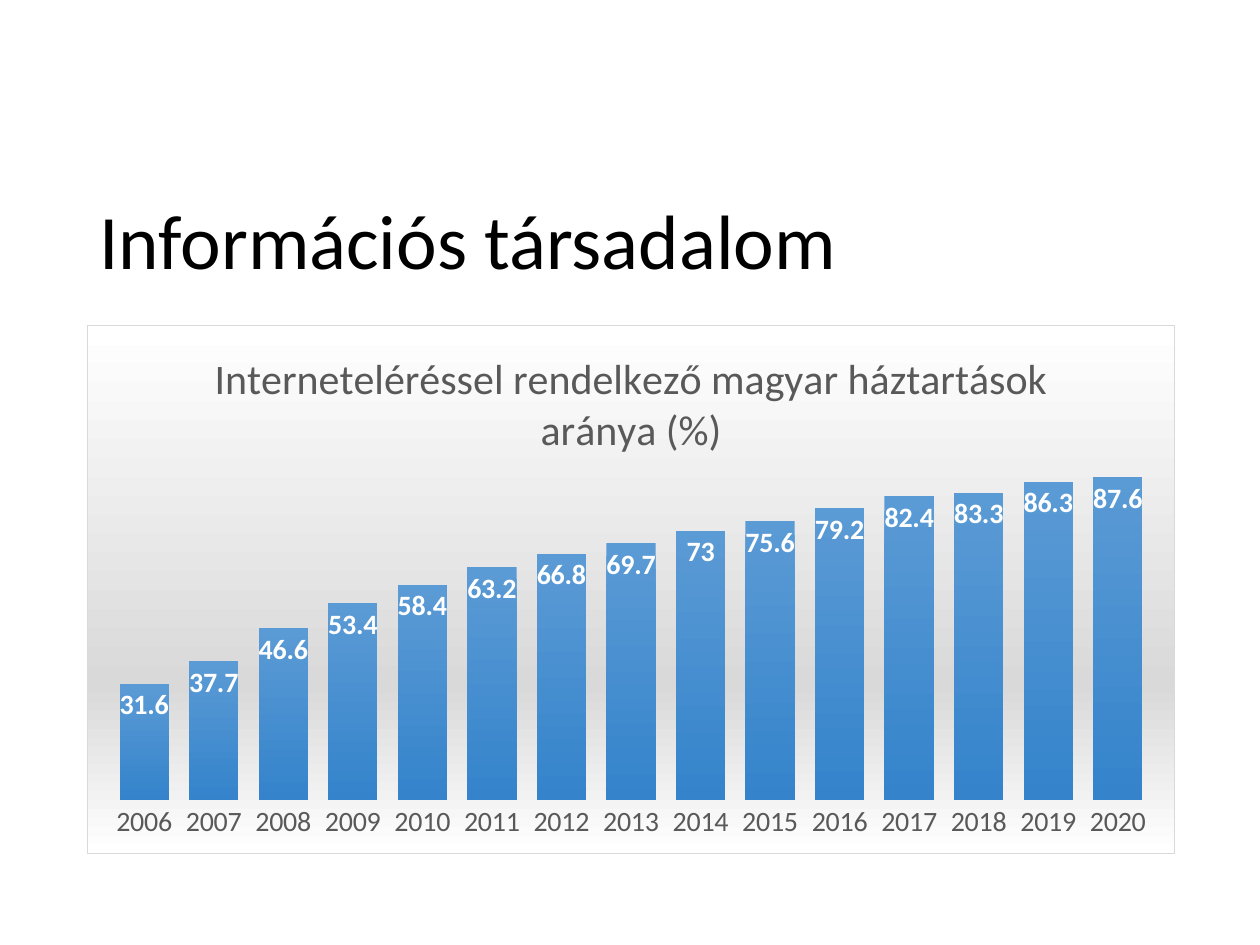
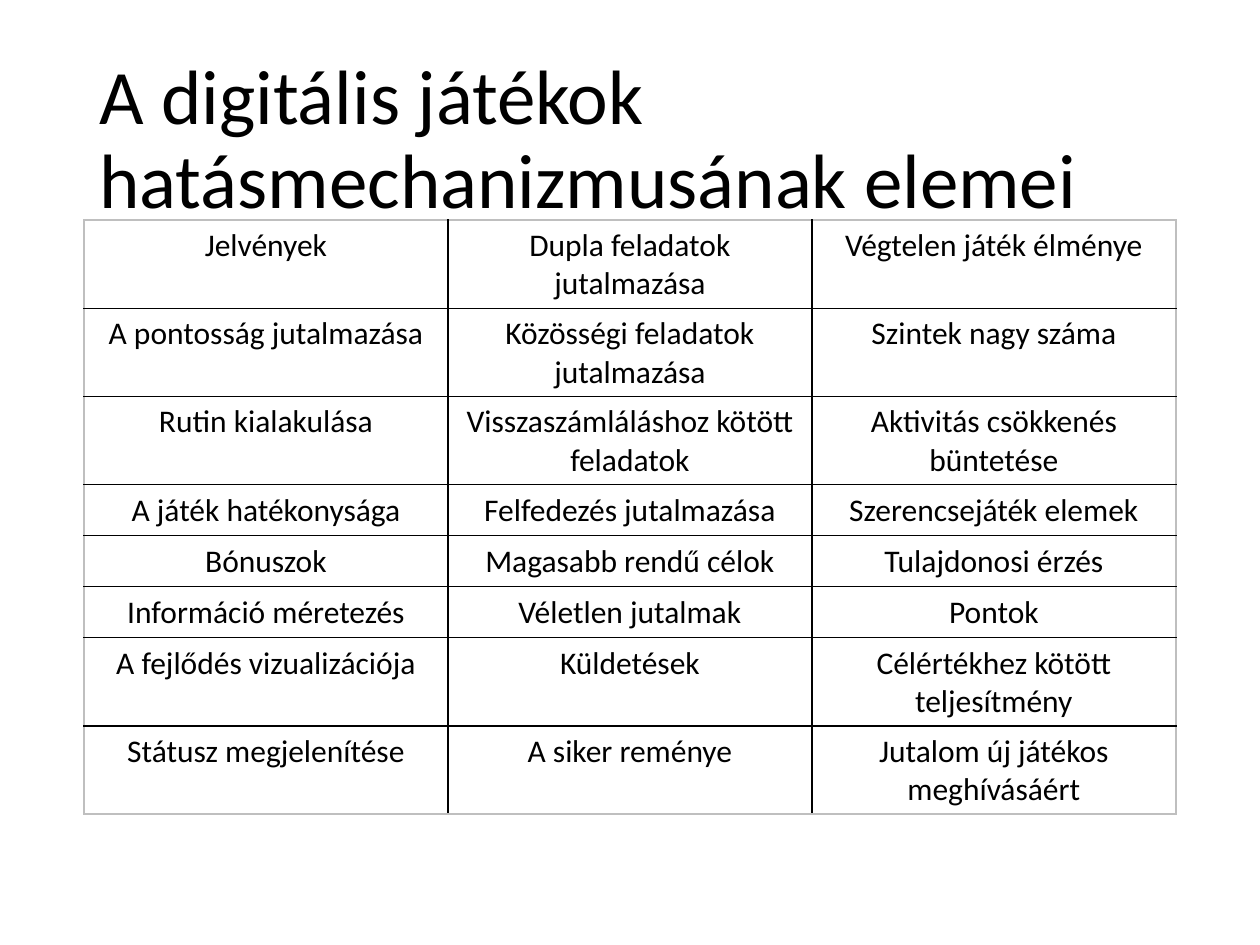
from dataclasses import dataclass

from lxml import etree
from pptx import Presentation, util as u
from pptx.chart.data import CategoryChartData
from pptx.dml.color import RGBColor
from pptx.enum import chart as ch, text
from pptx.oxml import parse_xml
from pptx.oxml.ns import nsdecls, qn

PX_PER_INCH = 126


@dataclass(frozen=True)
class Theme:
    font: str = "Calibri"
    black: str = "000000"
    white: str = "FFFFFF"
    gray: str = "595959"
    edge: str = "BFBFBF"
    frame: str = "D9D9D9"
    bar_top: str = "5B9BD5"
    bar_bottom: str = "3483CB"
    title_size: int = 44
    chart_title_size: int = 24
    cell_size: int = 18
    label_size: int = 16


T = Theme()

YEARS = [str(year) for year in range(2006, 2021)]
SHARES = [31.6, 37.7, 46.6, 53.4, 58.4, 63.2, 66.8, 69.7,
          73, 75.6, 79.2, 82.4, 83.3, 86.3, 87.6]

GAME_ELEMENTS = [
    ["Jelvények", "Dupla feladatok jutalmazása", "Végtelen játék élménye"],
    ["A pontosság jutalmazása", "Közösségi feladatok jutalmazása", "Szintek nagy száma"],
    ["Rutin kialakulása", "Visszaszámláláshoz kötött feladatok",
     "Aktivitás csökkenés büntetése"],
    ["A játék hatékonysága", "Felfedezés jutalmazása", "Szerencsejáték elemek"],
    ["Bónuszok", "Magasabb rendű célok", "Tulajdonosi érzés"],
    ["Információ méretezés", "Véletlen jutalmak", "Pontok"],
    ["A fejlődés vizualizációja", "Küldetések", "Célértékhez kötött teljesítmény"],
    ["Státusz megjelenítése", "A siker reménye", "Jutalom új játékos meghívásáért"],
]


def px(n):
    return u.Emu(round(n * u.Inches(1) / PX_PER_INCH))


def style_font(font, size, color, bold=False):
    font.name = T.font
    font.size = u.Pt(size)
    font.bold = bold
    font.color.rgb = RGBColor.from_string(color)


def gradient(stops):
    """Top-to-bottom gradient fill from (percent, colour) pairs."""
    marks = "".join(f'<a:gs pos="{pos * 1000}"><a:srgbClr val="{color}"/></a:gs>'
                    for pos, color in stops)
    return parse_xml(f'<a:gradFill {nsdecls("a")} rotWithShape="1"><a:gsLst>{marks}</a:gsLst>'
                     '<a:lin ang="5400000" scaled="0"/></a:gradFill>')


def outline(tag, color, points):
    return parse_xml(f'<a:{tag} {nsdecls("a")} w="{u.Pt(points)}"><a:solidFill>'
                     f'<a:srgbClr val="{color}"/></a:solidFill></a:{tag}>')


def add_title(s, words, top, height):
    tf = s.shapes.add_textbox(px(87), px(top), px(1086), px(height)).text_frame
    tf.word_wrap = True
    tf.vertical_anchor = text.MSO_ANCHOR.MIDDLE
    tf.text = words
    p = tf.paragraphs[0]
    p.line_spacing = 0.9
    style_font(p.runs[0].font, T.title_size, T.black)


def frame_chart(chart):
    """Gradient background and thin border around the chart."""
    sp_pr = parse_xml(f'<c:spPr {nsdecls("c", "a")}/>')
    sp_pr.append(gradient([(0, T.white), (68, T.frame), (100, T.white)]))
    sp_pr.append(outline("ln", T.frame, 0.75))
    chart._chartSpace.find(qn("c:chart")).addnext(sp_pr)


def place_plot(chart, **box):
    """Fix the inner plot area as fractions of the chart."""
    plot_area = chart._chartSpace.find(".//" + qn("c:plotArea"))
    for old in plot_area.findall(qn("c:layout")):
        plot_area.remove(old)
    layout = parse_xml(f'<c:layout {nsdecls("c")}><c:manualLayout/></c:layout>')
    values = {"layoutTarget": "inner", "xMode": "edge", "yMode": "edge", **box}
    for tag, value in values.items():
        etree.SubElement(layout[0], qn("c:" + tag)).set("val", str(value))
    plot_area.insert(0, layout)


def add_column_chart(s, title, cats, values, box):
    data = CategoryChartData()
    data.categories = cats
    data.add_series("Series 1", values)
    chart = s.shapes.add_chart(ch.XL_CHART_TYPE.COLUMN_CLUSTERED,
                               *map(px, box), data).chart
    style_font(chart.font, 10, T.black)
    chart.has_legend = False
    frame_chart(chart)
    place_plot(chart, x=0.02, y=0.2, w=0.96, h=0.7)

    # Title
    chart.has_title = True
    tf = chart.chart_title.text_frame
    tf.text = title
    style_font(tf.paragraphs[0].runs[0].font, T.chart_title_size, T.gray)
    chart.chart_title.include_in_layout = False

    # Axes
    cat_axis, val_axis = chart.category_axis, chart.value_axis
    cat_axis.major_tick_mark = ch.XL_TICK_MARK.NONE
    cat_axis.format.line.fill.background()
    style_font(cat_axis.tick_labels.font, T.label_size, T.gray)
    val_axis.visible = False
    val_axis.has_major_gridlines = False
    val_axis.minimum_scale, val_axis.maximum_scale = 0, 100

    # Columns and their values
    plot = chart.plots[0]
    plot.gap_width = 41
    plot.vary_by_categories = False
    bars = plot.series[0]
    bars._element.get_or_add_spPr().append(gradient([(0, T.bar_top), (100, T.bar_bottom)]))
    labels = bars.data_labels
    labels.show_value = True
    labels.position = ch.XL_LABEL_POSITION.INSIDE_END
    style_font(labels.font, T.label_size, T.white, bold=True)


def fill_cell(cell, words, edges):
    cell.text = words
    p = cell.text_frame.paragraphs[0]
    p.alignment = text.PP_ALIGN.CENTER
    style_font(p.runs[0].font, T.cell_size, T.black)
    tc_pr = cell._tc.get_or_add_tcPr()
    for tag, is_outer in edges.items():
        tc_pr.append(outline(tag, T.edge if is_outer else T.black, 1))
    cell.fill.background()


def add_grid(s, rows, left, top, col_width, row_height):
    n_rows, n_cols = len(rows), len(rows[0])
    table = s.shapes.add_table(n_rows, n_cols, px(left), px(top),
                               px(n_cols * col_width), px(n_rows * row_height)).table
    table.first_row = table.horz_banding = False
    for col in table.columns:
        col.width = px(col_width)
    for i, row in enumerate(rows):
        table.rows[i].height = px(row_height)
        for j, words in enumerate(row):
            edges = {"lnL": j == 0, "lnR": j == n_cols - 1,
                     "lnT": i == 0, "lnB": i == n_rows - 1}
            fill_cell(table.cell(i, j), words, edges)


def main():
    prs = Presentation()
    prs.slide_width, prs.slide_height = u.Inches(10), u.Inches(7.5)
    blank = prs.slide_layouts[6]

    # Households with internet access
    s = prs.slides.add_slide(blank)
    add_title(s, "Információs társadalom", 197, 96)
    add_column_chart(s, "Interneteléréssel rendelkező magyar háztartások aránya (%)",
                     YEARS, SHARES, (87, 325, 1088, 529))

    # Elements of digital games
    s = prs.slides.add_slide(blank)
    add_title(s, "A digitális játékok hatásmechanizmusának elemei", 50, 183)
    add_grid(s, GAME_ELEMENTS, left=84, top=220, col_width=364, row_height=51)

    prs.save("out.pptx")


if __name__ == "__main__":
    main()
